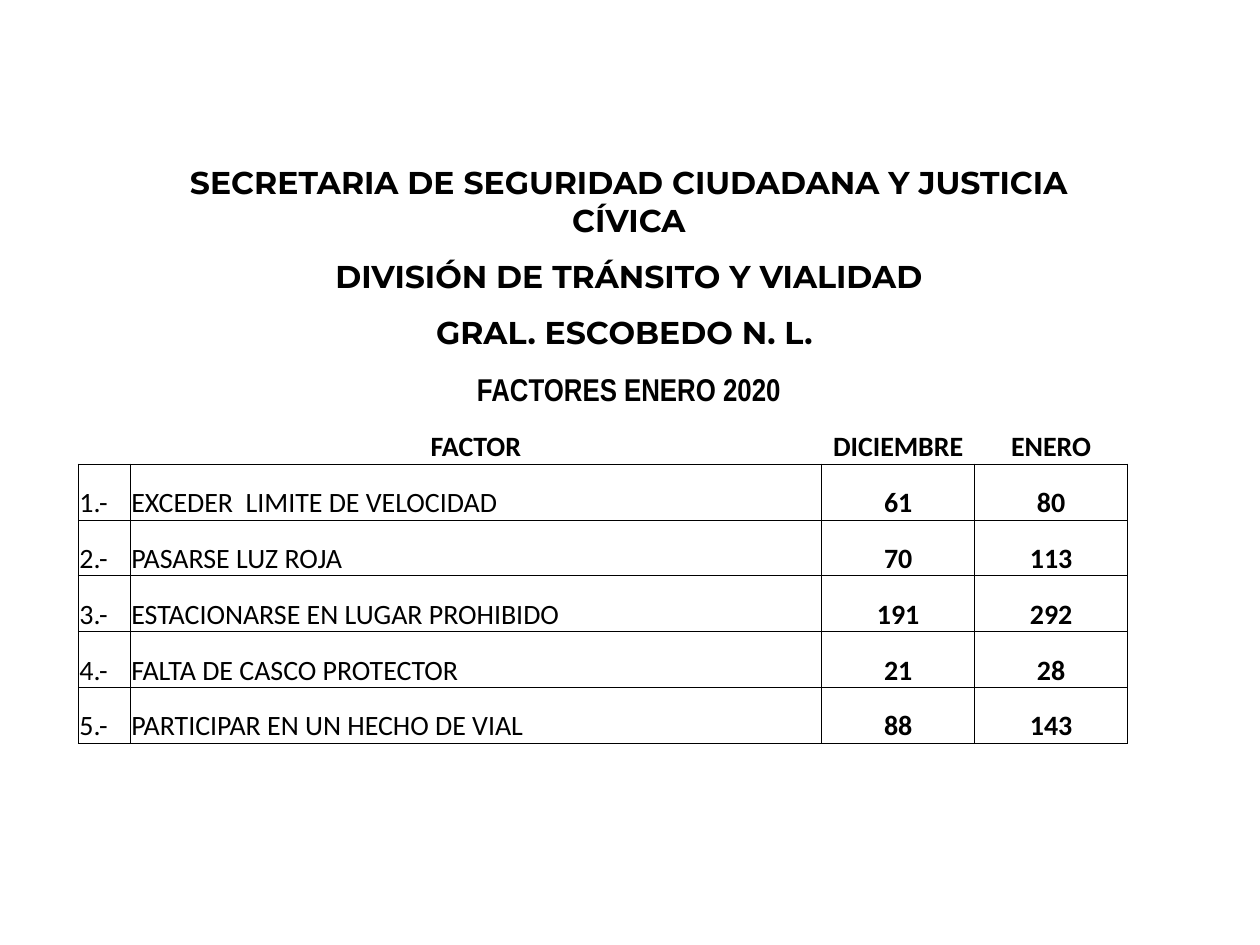
from pptx import Presentation
from pptx.dml.color import RGBColor
from pptx.enum.text import MSO_ANCHOR, PP_ALIGN
from pptx.oxml.ns import qn
from pptx.util import Pt
from lxml import etree

LEFT, MID = PP_ALIGN.LEFT, PP_ALIGN.CENTER
BASE = MSO_ANCHOR.BOTTOM
INK = {"text": "000000", "line": "000000"}

HEADS = [
    ("SECRETARIA DE SEGURIDAD CIUDADANA Y JUSTICIA CÍVICA", "Montserrat"),
    ("DIVISIÓN DE TRÁNSITO Y VIALIDAD", "Montserrat"),
    ("GRAL. ESCOBEDO N. L. ", "Montserrat"),
    ("FACTORES ENERO 2020", "Arial Narrow"),
]
LABELS = ["", "FACTOR", "DICIEMBRE", "ENERO"]
FACTORS = [
    ("EXCEDER  LIMITE DE VELOCIDAD", 61, 80),
    ("PASARSE LUZ ROJA", 70, 113),
    ("ESTACIONARSE EN LUGAR PROHIBIDO", 191, 292),
    ("FALTA DE CASCO PROTECTOR", 21, 28),
    ("PARTICIPAR EN UN HECHO DE VIAL", 88, 143),
]
WIDTHS = [29.7, 395.2, 87.4, 87.4]
FIRST, STEP = 44.3, 31.93


def write(cell, text, face, size, bold, align):
    para = cell.text_frame.paragraphs[0]
    para.alignment = align
    run = para.add_run()
    run.text = text
    look = {"name": face, "size": Pt(size), "bold": bold}
    for key, value in look.items():
        setattr(run.font, key, value)
    run.font.color.rgb = RGBColor.from_string(INK["text"])


def edge(cell, sides):
    props = cell._tc.get_or_add_tcPr()
    for side in ("L", "R", "T", "B"):
        line = etree.SubElement(props, qn("a:ln" + side), w=str(Pt(0.5)))
        if side in sides:
            fill = etree.SubElement(line, qn("a:solidFill"))
            etree.SubElement(fill, qn("a:srgbClr"), val=INK["line"])
        else:
            etree.SubElement(line, qn("a:noFill"))


deck = Presentation()
deck.slide_width, deck.slide_height = Pt(720), Pt(540)
slide = deck.slides.add_slide(deck.slide_layouts[6])

top = len(HEADS)
count = top + 1 + len(FACTORS)
heights = [FIRST] + [STEP] * (count - 1)
frame = slide.shapes.add_table(
    count, len(WIDTHS), Pt(44.7), Pt(92.9), Pt(sum(WIDTHS)), Pt(sum(heights))
)
table = frame.table
table.first_row = table.horz_banding = False
for col, width in zip(table.columns, WIDTHS):
    col.width = Pt(width)
for row, height in zip(table.rows, heights):
    row.height = Pt(height)

form = {
    "margin_left": Pt(0.7),
    "margin_right": Pt(0.7),
    "margin_top": Pt(0.7),
    "margin_bottom": 0,
    "vertical_anchor": BASE,
}
for r in range(count):
    sides = "" if r < top else "B" if r == top else "LRTB"
    for c in range(len(WIDTHS)):
        cell = table.cell(r, c)
        for key, value in form.items():
            setattr(cell, key, value)
        edge(cell, sides)
        cell.fill.background()

for r, (text, face) in enumerate(HEADS):
    cell = table.cell(r, 1)
    cell.merge(table.cell(r, 3))
    write(cell, text, face, 18, True, MID)

for c, text in enumerate(LABELS):
    if text:
        write(table.cell(top, c), text, "Calibri", 16, True, MID)

for n, (name, *values) in enumerate(FACTORS, 1):
    for c, value in enumerate([f"{n}.-", name, *values]):
        bold = c > 1
        align = MID if bold else LEFT
        write(table.cell(top + n, c), str(value), "Calibri", 16, bold, align)

deck.save("out.pptx")
